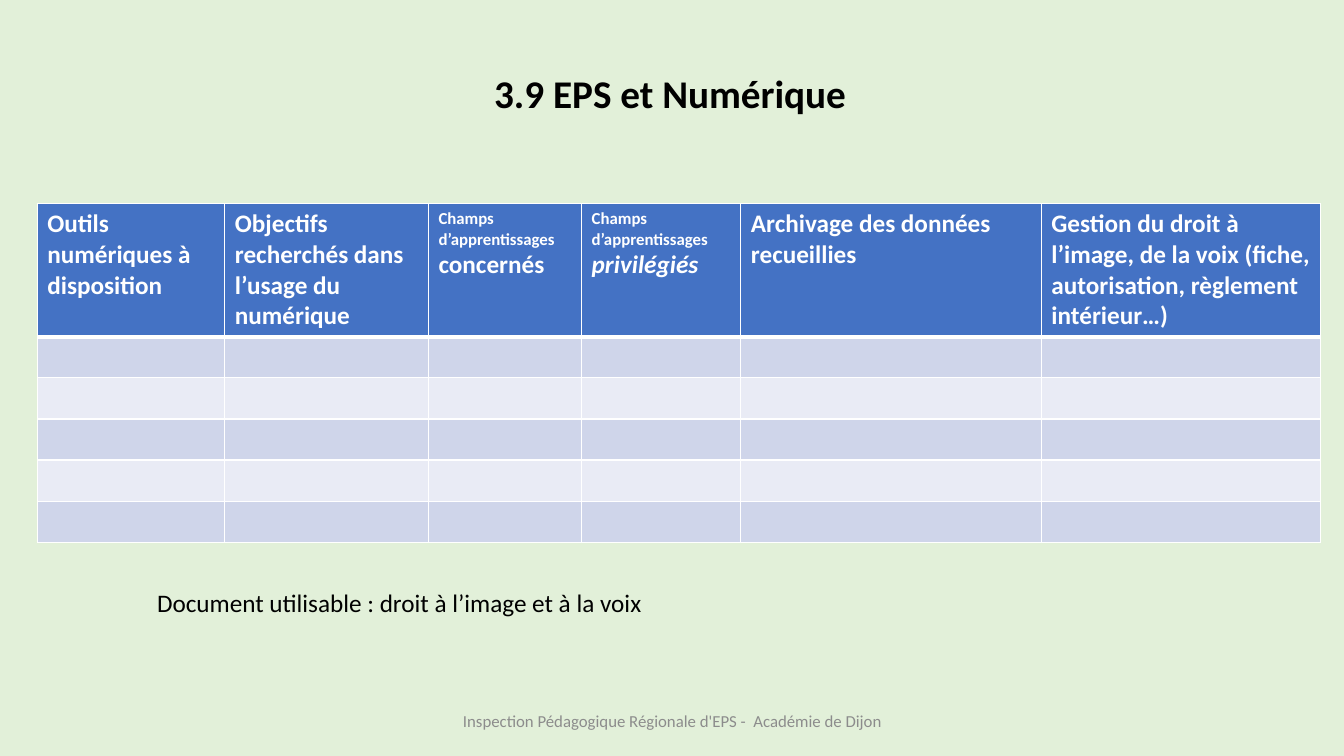
from dataclasses import dataclass

from lxml import etree
from pptx import Presentation
from pptx import util as u
from pptx.dml.color import RGBColor
from pptx.enum import text
from pptx.oxml.ns import qn


@dataclass(frozen=True)
class Theme:
    font: str = "Calibri"
    background: str = "E2F0D9"
    ink: str = "000000"
    muted: str = "8C8C8C"
    header: str = "4472C4"
    white: str = "FFFFFF"
    bands: tuple = ("CFD5EA", "E9EBF5")
    title: int = 28
    body: int = 18
    small: int = 12
    line: int = 1
    header_line: int = 3


class SlideBuilder:
    """Draws on one slide; every length is a percentage of the slide's size."""

    def __init__(self, prs, theme):
        self.prs, self.theme = prs, theme
        self.s = prs.slides.add_slide(prs.slide_layouts.get_by_name("Title Only"))
        self.fill(self.s.background, theme.background)

    def x(self, share):
        return u.Emu(round(self.prs.slide_width * share / 100))

    def y(self, share):
        return u.Emu(round(self.prs.slide_height * share / 100))

    def box(self, left, top, width, height):
        return self.x(left), self.y(top), self.x(width), self.y(height)

    def fill(self, target, color):
        target.fill.solid()
        target.fill.fore_color.rgb = RGBColor.from_string(color)

    def run(self, p, words, size, color, bold=False, italic=False):
        r = p.add_run()
        r.text = words
        r.font.name, r.font.size = self.theme.font, u.Pt(size)
        r.font.bold, r.font.italic = bold, italic
        r.font.color.rgb = RGBColor.from_string(color)

    def title(self, words, *place):
        sp = self.s.shapes.title
        sp.left, sp.top, sp.width, sp.height = self.box(*place)
        tf = sp.text_frame
        tf.auto_size, tf.word_wrap = text.MSO_AUTO_SIZE.NONE, False
        tf.vertical_anchor = text.MSO_ANCHOR.TOP
        p = tf.paragraphs[0]
        p.alignment = text.PP_ALIGN.CENTER
        self.run(p, words, self.theme.title, self.theme.ink, bold=True)

    def text(self, words, place, size, color, align=text.PP_ALIGN.LEFT,
             anchor=text.MSO_ANCHOR.TOP):
        tf = self.s.shapes.add_textbox(*self.box(*place)).text_frame
        tf.word_wrap, tf.vertical_anchor = True, anchor
        p = tf.paragraphs[0]
        p.alignment = align
        self.run(p, words, size, color)

    def borders(self, cell, bottom):
        tcPr = cell._tc.get_or_add_tcPr()
        for side in "LRTB":
            width = bottom if side == "B" else self.theme.line
            ln = etree.SubElement(tcPr, qn(f"a:ln{side}"), w=str(u.Pt(width)))
            color = etree.SubElement(ln, qn("a:solidFill"))
            etree.SubElement(color, qn("a:srgbClr"), val=self.theme.white)

    def table(self, left, top, widths, heights, headings):
        """Each heading is a list of (words, size, italic) runs."""
        t = self.theme
        place = self.box(left, top, sum(widths), sum(heights))
        table = self.s.shapes.add_table(len(heights), len(widths), *place).table
        for column, width in zip(table.columns, widths):
            column.width = self.x(width)
        for i, (row, height) in enumerate(zip(table.rows, heights)):
            row.height = self.y(height)
            for cell in row.cells:
                self.borders(cell, t.line if i else t.header_line)
                self.fill(cell, t.bands[(i - 1) % 2] if i else t.header)
        for cell, runs in zip(table.rows[0].cells, headings):
            p = cell.text_frame.paragraphs[0]
            for words, size, italic in runs:
                self.run(p, words, size, t.white, bold=True, italic=italic)


def main():
    prs = Presentation()
    prs.slide_width, prs.slide_height = u.Inches(13.33), u.Inches(7.5)
    theme = Theme()
    slide = SlideBuilder(prs, theme)

    slide.title("3.9 EPS et Numérique", 35.86, 8.53, 27.98, 7.6)

    fields = ("Champs d’apprentissages ", theme.small, False)
    headings = [
        [("Outils numériques à disposition", theme.body, False)],
        [("Objectifs recherchés dans l’usage du numérique", theme.body, False)],
        [fields, ("concernés", theme.body, False)],
        [fields, ("privilégiés", theme.body, True)],
        [("Archivage des données recueillies", theme.body, False)],
        [("Gestion du droit à l’image, de la voix (fiche, autorisation, "
          "règlement intérieur…)", theme.body, False)],
    ]
    slide.table(2.78, 26.93, [13.95, 15.15, 11.4, 11.85, 22.36, 20.78],
                [17.2] + [5.44] * 5, headings)

    slide.text("Document utilisable : droit à l’image et à la voix",
               (10.95, 77.07, 38.33, 5.33), theme.body, theme.ink)
    slide.text("Inspection Pédagogique Régionale d'EPS -  Académie de Dijon",
               (33.16, 92.67, 33.76, 5.33), theme.small, theme.muted,
               text.PP_ALIGN.CENTER, text.MSO_ANCHOR.MIDDLE)
    prs.save("out.pptx")


if __name__ == "__main__":
    main()
